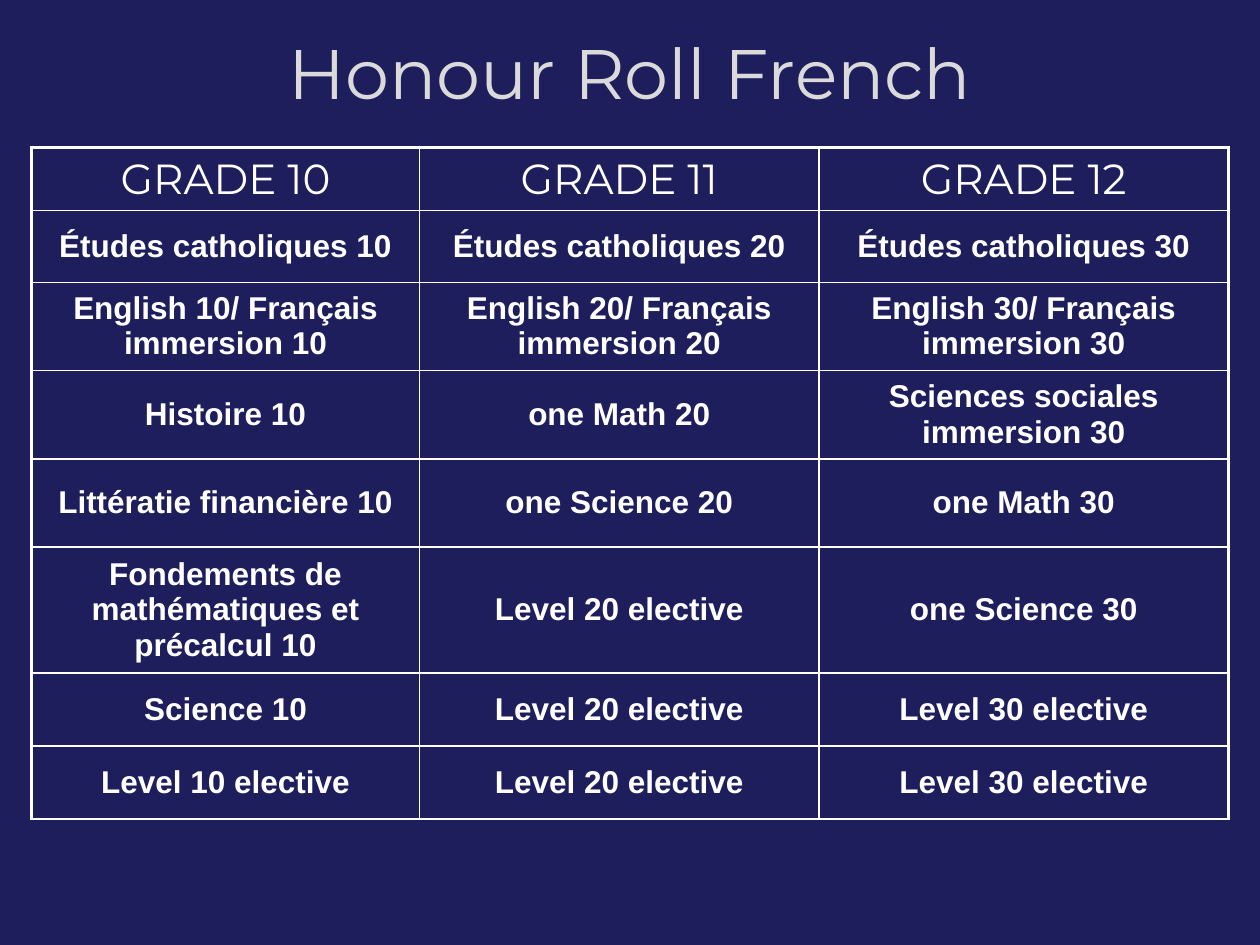
import pptx
import pptx.util
import pptx.dml.color
import pptx.enum.text
import pptx.oxml
import pptx.oxml.ns
from pptx.util import Inches

COLORS = {"background": "1E1E5C", "title": "DADADA", "table": "FFFFFF",
          "outline": "404040", "shadow": "000000"}
COLUMNS = [3.08, 3.17, 3.25]
ROW_HEIGHTS = [0.5, 0.57, 0.58, 0.6, 0.7, 0.58, 0.58, 0.58]
COURSES = [
    ("GRADE 10", "GRADE 11", "GRADE 12"),
    ("Études catholiques 10", "Études catholiques 20", "Études catholiques 30"),
    ("English 10/ Français immersion 10", "English 20/ Français immersion 20",
     "English 30/ Français immersion 30"),
    ("Histoire 10", "one Math 20", "Sciences sociales immersion 30"),
    ("Littératie financière 10", "one Science 20", "one Math 30"),
    ("Fondements de mathématiques et précalcul 10", "Level 20 elective",
     "one Science 30"),
    ("Science 10", "Level 20 elective", "Level 30 elective"),
    ("Level 10 elective", "Level 20 elective", "Level 30 elective"),
]
THIN, THICK = 1, 2.25


def rgb(name):
    return pptx.dml.color.RGBColor.from_string(COLORS[name])


def xml(tag, attrs, body):
    ns = pptx.oxml.ns.nsdecls("a")
    return pptx.oxml.parse_xml(f"<a:{tag} {ns} {attrs}>{body}</a:{tag}>")


def solid(name, alpha=100):
    return (f'<a:solidFill><a:srgbClr val="{COLORS[name]}">'
            f'<a:alpha val="{alpha * 1000}"/></a:srgbClr></a:solidFill>')


def style_text(p, size, font, color, bold=False):
    p.alignment = pptx.enum.text.PP_ALIGN.CENTER
    p.font.size = pptx.util.Pt(size)
    p.font.name = font
    p.font.bold = bold
    p.font.color.rgb = rgb(color)


def add_title(s, text):
    tf = s.shapes.add_textbox(Inches(0.75), Inches(0.11), Inches(8.5), Inches(0.92)).text_frame
    tf.word_wrap = True
    tf.vertical_anchor = pptx.enum.text.MSO_ANCHOR.MIDDLE
    p = tf.paragraphs[0]
    r = p.add_run()
    r.text = text
    style_text(p, 40, "Montserrat", "title")
    # Faint outline and soft shadow on the letters
    r.font.fill.solid()
    r.font.fill.fore_color.rgb = rgb("title")
    rPr = r.font.fill.fore_color and r._r.get_or_add_rPr()
    rPr.insert(0, xml("ln", f'w="{pptx.util.Pt(0.75)}"', solid("outline", 10)))
    rPr.insert(2, xml("effectLst", "", (
        '<a:outerShdw blurRad="38100" dist="38100" dir="2700000">'
        f'<a:srgbClr val="{COLORS["shadow"]}"><a:alpha val="43000"/></a:srgbClr>'
        '</a:outerShdw>')))


def set_borders(cell, widths):
    tcPr = cell._tc.get_or_add_tcPr()
    for i, (side, width) in enumerate(zip("LRTB", widths)):
        tcPr.insert(i, xml(f"ln{side}", f'w="{pptx.util.Pt(width)}"', solid("table")))


def add_course_table(s):
    frame = s.shapes.add_table(len(COURSES), len(COLUMNS), Inches(0.25),
                               Inches(1.17), Inches(9.5), Inches(5.33))
    table = frame.table
    table.first_row = table.horz_banding = False
    for column, width in zip(table.columns, COLUMNS):
        column.width = Inches(width)
    for row, height in zip(table.rows, ROW_HEIGHTS):
        row.height = Inches(height)

    last = len(COLUMNS) - 1
    for i, courses in enumerate(COURSES):
        for j, course in enumerate(courses):
            cell = table.cell(i, j)
            cell.text = course
            cell.vertical_anchor = pptx.enum.text.MSO_ANCHOR.MIDDLE
            cell.fill.background()
            p = cell.text_frame.paragraphs[0]
            if i == 0:
                style_text(p, 24, "Montserrat", "table")
            else:
                style_text(p, 18, "Arial", "table", bold=True)
            # Thick lines at the left, right and top edges of the table
            set_borders(cell, [THICK if j == 0 else THIN,
                               THICK if j == last else THIN,
                               THICK if i == 0 else THIN, THIN])


def main():
    prs = pptx.Presentation()
    prs.slide_width, prs.slide_height = Inches(10), Inches(7.5)
    s = prs.slides.add_slide(prs.slide_layouts[6])
    s.background.fill.solid()
    s.background.fill.fore_color.rgb = rgb("background")
    add_title(s, "Honour Roll French")
    add_course_table(s)
    prs.save("out.pptx")


if __name__ == "__main__":
    main()
